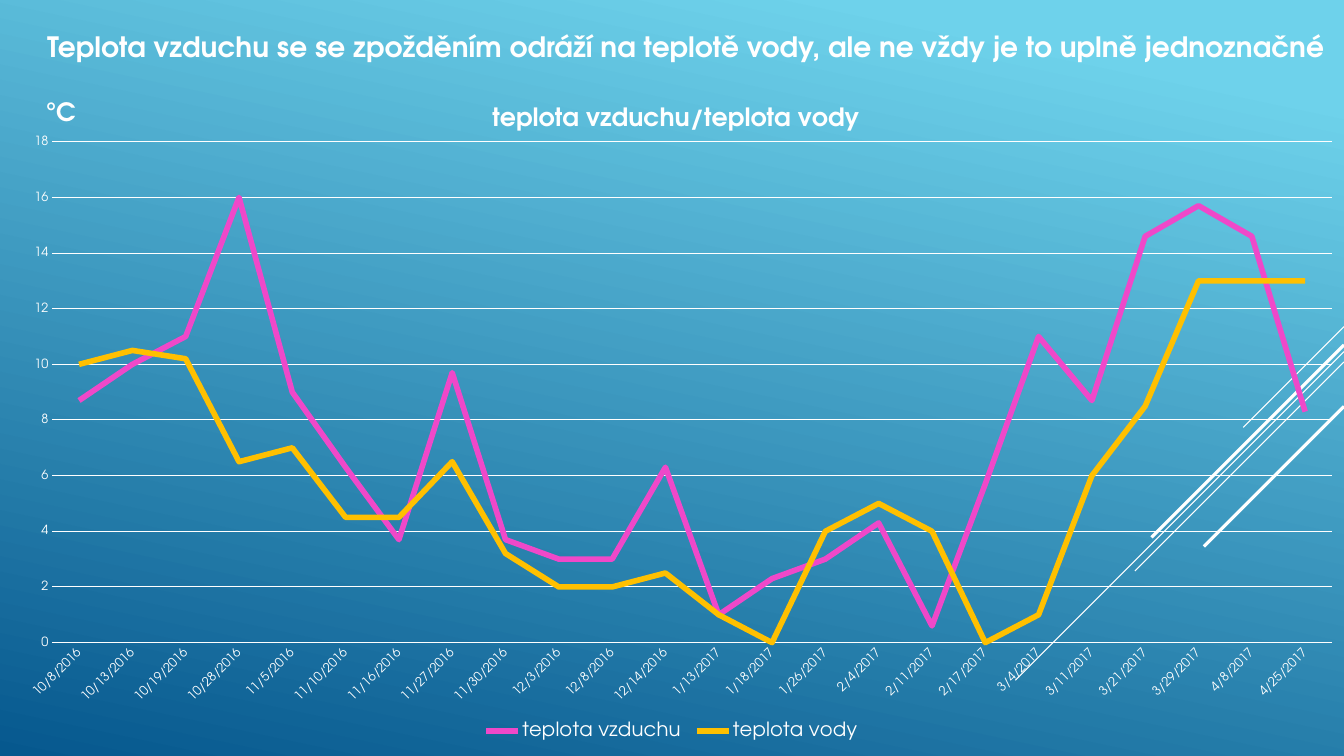
from lxml import etree
from pptx import Presentation
from pptx.chart.data import CategoryChartData
from pptx.dml.color import RGBColor
from pptx.enum.chart import XL_CHART_TYPE, XL_LEGEND_POSITION, XL_MARKER_STYLE, XL_TICK_MARK
from pptx.enum.shapes import MSO_CONNECTOR
from pptx.enum.text import MSO_ANCHOR, PP_ALIGN
from pptx.oxml.ns import qn
from pptx.util import Cm, Pt

LINE_CHART = XL_CHART_TYPE.LINE
LEGEND_BOTTOM = XL_LEGEND_POSITION.BOTTOM
NO_MARKER = XL_MARKER_STYLE.NONE
NO_TICK = XL_TICK_MARK.NONE
STRAIGHT = MSO_CONNECTOR.STRAIGHT
MIDDLE = MSO_ANCHOR.MIDDLE
LEFT = PP_ALIGN.LEFT

FONT = "TeX Gyre Adventor"
COLORS = {"white": "FFFFFF", "sky": "6ED2EB", "deep": "06588E",
          "air": "EF48C9", "water": "FFC000"}
SLIDE_WIDTH, SLIDE_HEIGHT = 33.87, 19.05

DATES = [
    "10/8/2016", "10/13/2016", "10/19/2016", "10/28/2016", "11/5/2016", "11/10/2016",
    "11/16/2016", "11/27/2016", "11/30/2016", "12/3/2016", "12/8/2016", "12/14/2016",
    "1/13/2017", "1/18/2017", "1/26/2017", "2/4/2017", "2/11/2017", "2/17/2017",
    "3/4/2017", "3/11/2017", "3/21/2017", "3/29/2017", "4/8/2017", "4/25/2017",
]
TEMPERATURES = [
    ("teplota vzduchu", "air", [8.7, 10, 11, 16, 9, 6.3, 3.7, 9.7, 3.7, 3, 3, 6.3,
                                1, 2.3, 3, 4.3, 0.6, 5.7, 11, 8.7, 14.6, 15.7, 14.6, 8.3]),
    ("teplota vody", "water", [10, 10.5, 10.2, 6.5, 7, 4.5, 4.5, 6.5, 3.2, 2, 2, 2.5,
                               1, 0, 4, 5, 4, 0, 1, 6, 8.5, 13, 13, 13]),
]
# Height at the right edge, horizontal reach, line width
DIAGONALS = [(8.23, 2.54, 0.75), (8.86, 8.28, 0.75), (9.12, 5.27, 0.75),
             (8.69, 4.85, 2.25), (10.24, 3.53, 2.25)]


def rgb(name):
    return RGBColor.from_string(COLORS[name])


def apply_format(target, values):
    for name, value in values.items():
        setattr(target, name, value)


def place(element, **fractions):
    """Give a chart part a manual layout in fractions of the chart."""
    for old_layout in element.findall(qn("c:layout")):
        element.remove(old_layout)
    layout = etree.Element(qn("c:layout"))
    manual = etree.SubElement(layout, qn("c:manualLayout"))
    if element.tag == qn("c:plotArea"):
        etree.SubElement(manual, qn("c:layoutTarget")).set("val", "inner")
        element.insert(0, layout)
    else:
        element.find(qn("c:overlay")).addprevious(layout)
    for mode in ("xMode", "yMode"):
        etree.SubElement(manual, qn(f"c:{mode}")).set("val", "edge")
    for name, value in fractions.items():
        etree.SubElement(manual, qn(f"c:{name}")).set("val", str(value))


class SlideBuilder:
    def __init__(self, slide):
        self.slide = slide

    def style_font(self, font, size, bold=False):
        apply_format(font, {"name": FONT, "size": Pt(size), "bold": bold})
        font.color.rgb = rgb("white")

    def style_line(self, line, color, width):
        line.color.rgb = rgb(color)
        line.width = Pt(width)

    def background(self, angle, stops):
        fill = self.slide.background.fill
        fill.gradient()
        fill.gradient_angle = angle
        for stop, (position, color) in zip(fill.gradient_stops, stops):
            stop.position = position
            stop.color.rgb = rgb(color)

    def diagonal(self, top, reach, width):
        connector = self.slide.shapes.add_connector(
            STRAIGHT, Cm(SLIDE_WIDTH), Cm(top), Cm(SLIDE_WIDTH - reach), Cm(top + reach))
        self.style_line(connector.line, "white", width)
        etree.SubElement(connector.element.spPr, qn("a:effectLst"))

    def text(self, content, left, top, width, height, size):
        shape = self.slide.shapes.add_textbox(Cm(left), Cm(top), Cm(width), Cm(height))
        apply_format(shape.text_frame, {"word_wrap": True, "vertical_anchor": MIDDLE})
        paragraph = shape.text_frame.paragraphs[0]
        apply_format(paragraph, {"alignment": LEFT, "space_before": Pt(4), "space_after": Pt(6)})
        run = paragraph.add_run()
        run.text = content
        self.style_font(run.font, size, bold=True)

    def chart_title(self, title, content, x, y):
        title.text_frame.text = content
        self.style_font(title.text_frame.paragraphs[0].runs[0].font, 18, bold=True)
        title.element.find(".//" + qn("a:bodyPr")).set("rot", "0")
        place(title.element, x=x, y=y)

    def line_chart(self, title, unit, left, top, width, height):
        data = CategoryChartData()
        data.categories = DATES
        for name, _, values in TEMPERATURES:
            data.add_series(name, values)
        chart = self.slide.shapes.add_chart(
            LINE_CHART, Cm(left), Cm(top), Cm(width), Cm(height), data).chart
        self.style_font(chart.font, 10)
        place(chart.element.find(".//" + qn("c:plotArea")), x=0.039, y=0.089, w=0.952, h=0.743)

        # Series
        chart.plots[0].vary_by_categories = False
        for series, (_, color, _) in zip(chart.plots[0].series, TEMPERATURES):
            series.smooth = False
            series.marker.style = NO_MARKER
            self.style_line(series.format.line, color, 4)

        # Axes
        date_axis, degree_axis = chart.category_axis, chart.value_axis
        for axis in (date_axis, degree_axis):
            apply_format(axis, {"major_tick_mark": NO_TICK, "minor_tick_mark": NO_TICK})
            self.style_font(axis.tick_labels.font, 9)
        self.style_line(date_axis.format.line, "white", 0.75)
        chart.element.xpath(".//c:catAx/c:txPr/a:bodyPr")[0].set("rot", "-2700000")
        apply_format(degree_axis, {"minimum_scale": 0, "maximum_scale": 18, "major_unit": 2,
                                   "has_major_gridlines": True})
        degree_axis.format.line.fill.background()
        self.style_line(degree_axis.major_gridlines.format.line, "white", 0.75)

        # Titles and legend
        chart.has_title = True
        self.chart_title(chart.chart_title, title, 0.363, 0.027)
        self.chart_title(degree_axis.axis_title, unit, 0.031, 0.019)
        chart.has_legend = True
        apply_format(chart.legend, {"position": LEGEND_BOTTOM, "include_in_layout": False})
        self.style_font(chart.legend.font, 14)
        place(chart.element.find(".//" + qn("c:legend")), x=0.355, y=0.938, w=0.29, h=0.05)


def main():
    presentation = Presentation()
    apply_format(presentation, {"slide_width": Cm(SLIDE_WIDTH), "slide_height": Cm(SLIDE_HEIGHT)})
    builder = SlideBuilder(presentation.slides.add_slide(presentation.slide_layouts[6]))

    # Backdrop
    builder.background(258, [(0.1, "sky"), (1, "deep")])
    for diagonal in DIAGONALS:
        builder.diagonal(*diagonal)

    # Heading and chart
    builder.text("Teplota vzduchu se se zpožděním odráží na teplotě vody, "
                 "ale ne vždy je to uplně jednoznačné", 0.94, -3.84, 32.92, 10.03, 20)
    builder.line_chart("teplota vzduchu/teplota vody", "°C", 0, 2.06, SLIDE_WIDTH, 16.99)

    presentation.save("out.pptx")


if __name__ == "__main__":
    main()
